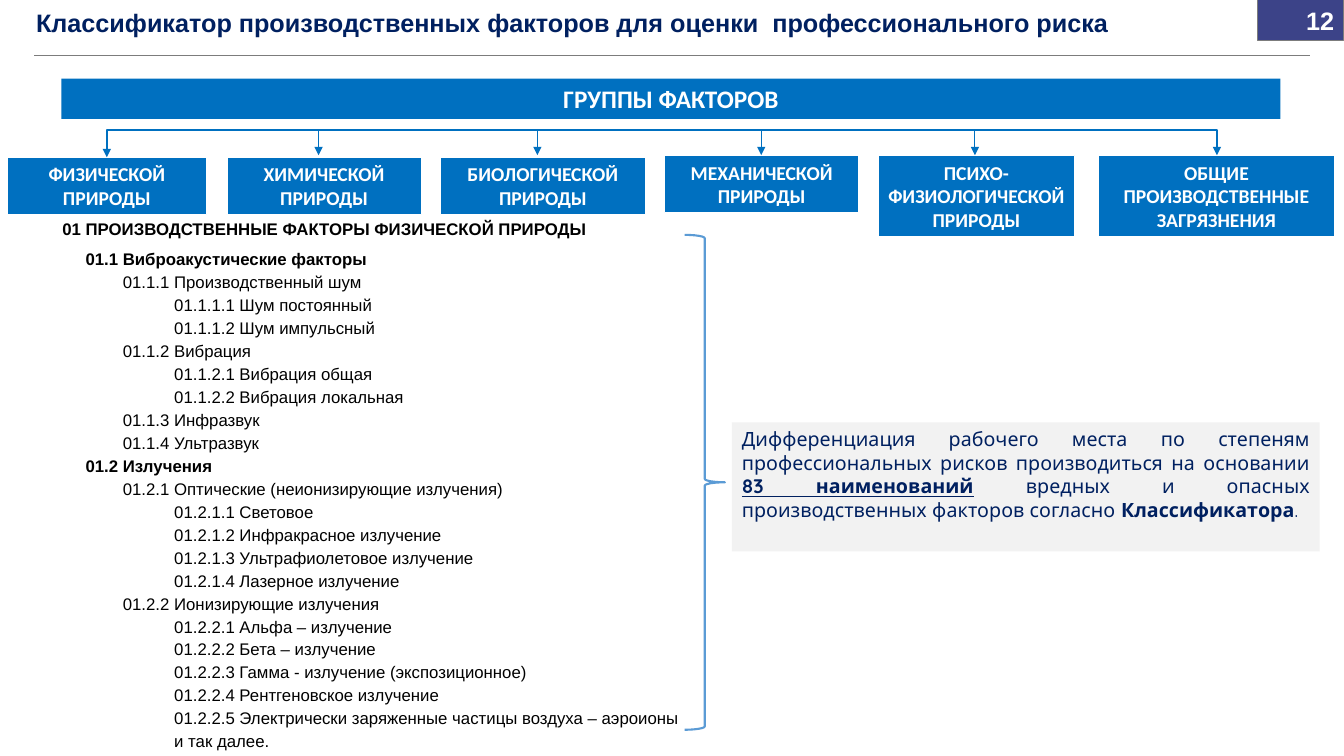
from dataclasses import dataclass

from lxml.etree import SubElement
from pptx import Presentation
from pptx.dml.color import RGBColor
from pptx.enum.shapes import MSO_CONNECTOR as Link, MSO_SHAPE as Preset
from pptx.enum.text import MSO_ANCHOR as Anchor, PP_ALIGN as Align
from pptx.oxml.ns import qn
from pptx.util import Inches, Pt


@dataclass(frozen=True)
class Theme:
    blue: str = "0070C0"
    navy: str = "002060"
    brace: str = "5B9BD5"
    badge: str = "3C4388"
    grey: str = "7C7C7C"
    pale: str = "F2F2F2"
    white: str = "FFFFFF"
    black: str = "000000"
    main: str = "Arial"
    label: str = "Calibri"
    note: str = "Quicksand"
    large: int = 18
    medium: int = 14
    small: int = 12


THEME = Theme()
WIDTH, HEIGHT = 13.33, 7.5
BUS_TOP, ARROW_END = 1.29, 1.54
INDENTS = (0, 0.23, 0.6, 1.11)

# left, top, width, height, arrow x, lines of the label
GROUPS = (
    (0.07, 1.56, 1.98, 0.57, 1.06, ["ФИЗИЧЕСКОЙ ПРИРОДЫ"]),
    (2.25, 1.56, 1.93, 0.57, 3.16, ["ХИМИЧЕСКОЙ ПРИРОДЫ"]),
    (4.37, 1.56, 2.03, 0.57, 5.33, ["БИОЛОГИЧЕСКОЙ ПРИРОДЫ"]),
    (6.59, 1.54, 1.93, 0.57, 7.55, ["МЕХАНИЧЕСКОЙ ПРИРОДЫ"]),
    (8.71, 1.54, 1.95, 0.81, 9.67, ["ПСИХО-ФИЗИОЛОГИЧЕСКОЙ ", "ПРИРОДЫ"]),
    (10.89, 1.54, 2.35, 0.81, 12.07, ["ОБЩИЕ ПРОИЗВОДСТВЕННЫЕ ЗАГРЯЗНЕНИЯ"]),
)

# level, text
FACTORS = (
    (0, "01 ПРОИЗВОДСТВЕННЫЕ ФАКТОРЫ ФИЗИЧЕСКОЙ ПРИРОДЫ"),
    (1, "01.1 Виброакустические факторы"),
    (2, "01.1.1 Производственный шум"),
    (3, "01.1.1.1 Шум постоянный"),
    (3, "01.1.1.2 Шум импульсный"),
    (2, "01.1.2 Вибрация"),
    (3, "01.1.2.1 Вибрация общая"),
    (3, "01.1.2.2 Вибрация локальная"),
    (2, "01.1.3 Инфразвук"),
    (2, "01.1.4 Ультразвук"),
    (1, "01.2 Излучения"),
    (2, "01.2.1 Оптические (неионизирующие излучения)"),
    (3, "01.2.1.1 Световое"),
    (3, "01.2.1.2 Инфракрасное излучение"),
    (3, "01.2.1.3 Ультрафиолетовое излучение"),
    (3, "01.2.1.4 Лазерное излучение"),
    (2, "01.2.2 Ионизирующие излучения"),
    (3, "01.2.2.1 Альфа – излучение"),
    (3, "01.2.2.2 Бета – излучение"),
    (3, "01.2.2.3 Гамма - излучение (экспозиционное)"),
    (3, "01.2.2.4 Рентгеновское излучение"),
    (3, "01.2.2.5 Электрически заряженные частицы воздуха – аэроионы"),
    (3, "и так далее."),
)

# text, bold, underlined
NOTE = (
    ("Дифференциация рабочего места по степеням профессиональных рисков "
     "производиться на основании ", False, False),
    ("83 наименований", True, True),
    (" ", True, False),
    ("вредных и опасных производственных факторов согласно ", False, False),
    ("Классификатора", True, False),
    (".", False, False),
)


def color(code):
    return RGBColor.from_string(code)


def inches(box):
    return [Inches(length) for length in box]


def add_span(para, text, font, size, code, bold=False, underline=False):
    span = para.add_run()
    span.text = text
    span.font.name, span.font.size = font, Pt(size)
    span.font.color.rgb = color(code)
    span.font.bold, span.font.underline = bold, underline


def next_para(frame, index):
    return frame.add_paragraph() if index else frame.paragraphs[0]


def set_line(shape, code, width):
    shape.line.color.rgb = color(code)
    shape.line.width = Pt(width)


def add_panel(page, box, fill, line=None, width=1, anchor=Anchor.MIDDLE):
    """Add a filled rectangle and return its text frame."""
    panel = page.shapes.add_shape(Preset.RECTANGLE, *inches(box))
    panel.shadow.inherit = False
    panel.fill.solid()
    panel.fill.fore_color.rgb = color(fill)
    if line:
        set_line(panel, line, width)
    else:
        panel.line.fill.background()
    panel.text_frame.word_wrap = True
    panel.text_frame.vertical_anchor = anchor
    return panel.text_frame


def add_text_box(page, box):
    frame = page.shapes.add_textbox(*inches(box)).text_frame
    frame.word_wrap = True
    return frame


def add_arrowheads(shape, *ends):
    for end in ends:
        SubElement(shape.line._get_or_add_ln(), qn("a:" + end), type="triangle")


def add_line(page, start, end, code, width):
    line = page.shapes.add_connector(Link.STRAIGHT, *inches(start + end))
    set_line(line, code, width)
    SubElement(line._element.spPr, qn("a:effectLst"))
    return line


def add_header(page, left, width):
    title = add_text_box(page, (left - 0.08, 0.06, width, 0.37)).paragraphs[0]
    title.line_spacing = 0.9
    add_span(title, "Классификатор производственных факторов для оценки"
             "  профессионального риска", THEME.main, THEME.large, THEME.navy, True)
    add_line(page, (left, 0.55), (WIDTH - left, 0.55), THEME.grey, 0.5)

    badge = add_panel(page, (WIDTH - 0.86, 0, 0.86, 0.4), THEME.badge, THEME.grey, 0.75)
    number = badge.paragraphs[0]
    number.alignment = Align.RIGHT
    add_span(number, "12", THEME.main, THEME.large, THEME.white, True)


def add_label(frame, lines, size):
    for index, text in enumerate(lines):
        para = next_para(frame, index)
        para.alignment = Align.CENTER
        add_span(para, text, THEME.label, size, THEME.white, True)


def add_groups(page, box):
    add_label(add_panel(page, box, THEME.blue), ["ГРУППЫ ФАКТОРОВ"], THEME.large)
    for *group_box, _, lines in GROUPS:
        add_label(add_panel(page, group_box, THEME.blue, THEME.white), lines, THEME.medium)

    first, *inner, last = [group[4] for group in GROUPS]
    outline = page.shapes.build_freeform(Inches(first), Inches(GROUPS[0][1]))
    corners = [(first, BUS_TOP), (last, BUS_TOP), (last, ARROW_END)]
    outline.add_line_segments([inches(corner) for corner in corners], close=False)
    bus = outline.convert_to_shape()
    bus.shadow.inherit = False
    bus.fill.background()
    set_line(bus, THEME.blue, 1)
    add_arrowheads(bus, "headEnd", "tailEnd")
    for x in inner:
        arrow = add_line(page, (x, BUS_TOP), (x, ARROW_END), THEME.blue, 0.75)
        add_arrowheads(arrow, "tailEnd")


def add_factors(page, box):
    frame = add_text_box(page, box)
    for index, (level, text) in enumerate(FACTORS):
        para = next_para(frame, index)
        para.space_before = Pt(2)
        para.space_after = Pt(0 if level else 5)
        para._p.get_or_add_pPr().set("marL", str(Inches(INDENTS[level])))
        add_span(para, text, THEME.main, THEME.small, THEME.black, level < 2)


def add_note(page, box):
    left, top, width, height = box
    brace = page.shapes.add_shape(Preset.RIGHT_BRACE, *inches((left, top, 0.4, height)))
    brace.shadow.inherit = False
    brace.fill.background()
    set_line(brace, THEME.brace, 1.5)

    panel_box = (left + 0.47, top + 1.86, width - 0.47, 1.28)
    para = add_panel(page, panel_box, THEME.pale, anchor=Anchor.TOP).paragraphs[0]
    para.alignment = Align.JUSTIFY
    for text, bold, underline in NOTE:
        add_span(para, text, THEME.note, THEME.medium, THEME.navy, bold, underline)


def main():
    deck = Presentation()
    deck.slide_width, deck.slide_height = inches((WIDTH, HEIGHT))
    page = deck.slides.add_slide(deck.slide_layouts[6])
    add_header(page, 0.34, 13.86)
    add_groups(page, (0.61, 0.78, 12.09, 0.4))
    add_factors(page, (0.52, 2.12, 6.67, 5.43))
    add_note(page, (6.79, 2.33, 6.3, 4.91))
    deck.save("out.pptx")


if __name__ == "__main__":
    main()
